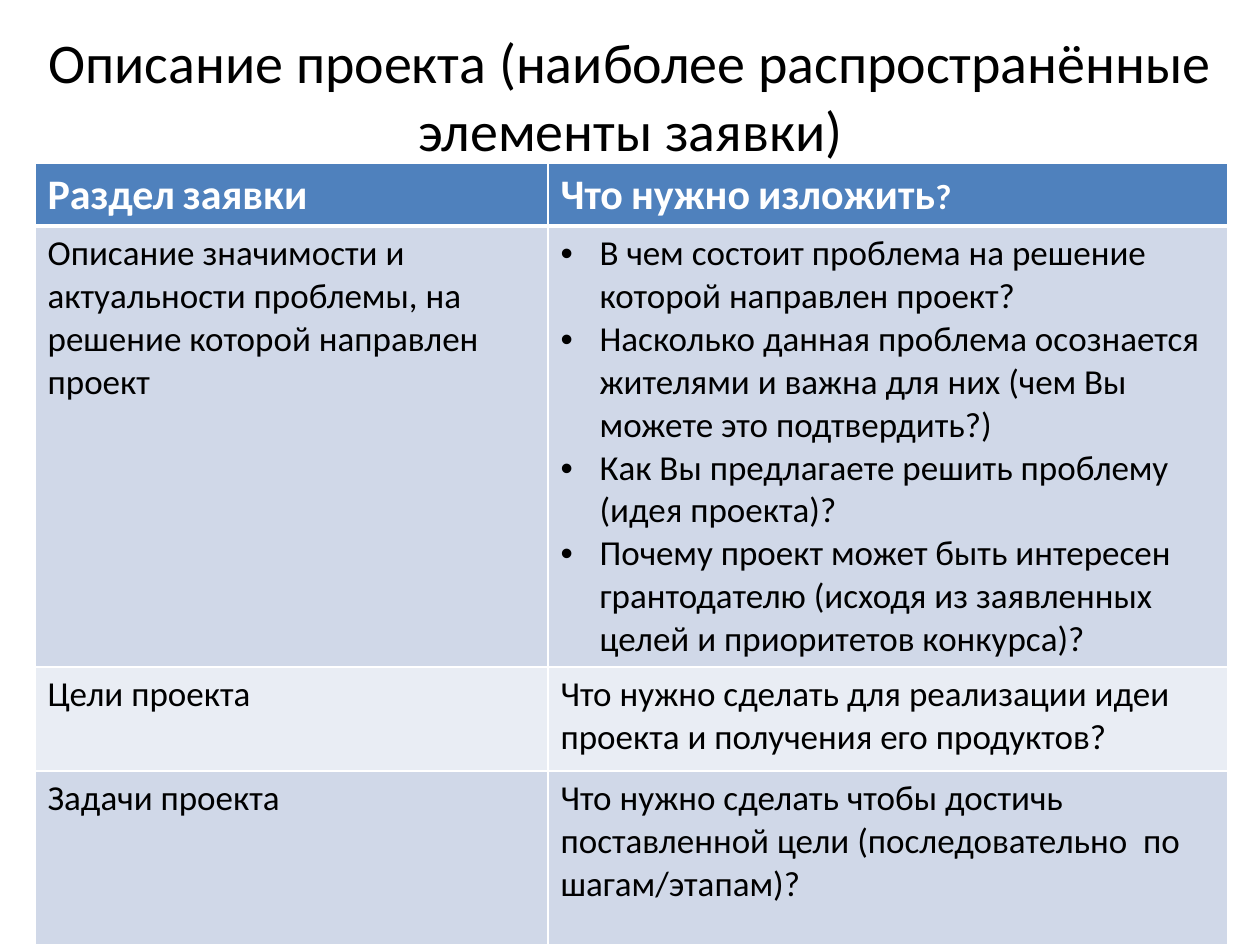
"""Builds the slide on the usual sections of a grant application."""
from dataclasses import dataclass

from lxml.etree import SubElement as Sub
from pptx import Presentation as Deck
from pptx.dml.color import RGBColor as Rgb
from pptx.enum.text import MSO_ANCHOR as Anchor, PP_ALIGN as Align
from pptx.oxml.ns import qn
from pptx.util import Emu, Pt

SCALE = 914400 / 126
FONT = "Calibri"
HEX = {"black": "000000", "white": "FFFFFF", "head": "4F81BD",
       "dark": "D0D8E8", "light": "E9EDF4"}
COLS = (513, 680)
INDENT = 39


@dataclass(frozen=True)
class Run:
    """A piece of text with its size."""
    text: str
    size: int = 20


@dataclass(frozen=True)
class Cell:
    """The paragraphs of one table cell."""
    paras: tuple[tuple[Run, ...], ...]
    listed: bool = False


@dataclass(frozen=True)
class Row:
    """One table row."""
    high: int
    fill: str
    cells: tuple[Cell, Cell]
    head: bool = False


def px(count: int) -> Emu:
    """Turns pixels into EMU."""
    return Emu(round(count * SCALE))


def plain(*lines: str, listed: bool = False) -> Cell:
    """Makes a cell with one run in each paragraph."""
    return Cell(tuple((Run(line),) for line in lines), listed)


ROWS = (
    Row(63, "head", (
        Cell(((Run("Раздел", 24), Run(" "), Run("заявки", 24)),)),
        Cell(((Run("Что", 24), Run(" "), Run("нужно", 24), Run(" "),
               Run("изложить", 24), Run("?")),)),
    ), head=True),
    Row(441, "dark", (
        plain("Описание значимости и актуальности проблемы, "
              "на решение которой направлен проект"),
        plain("В чем состоит проблема на решение которой направлен проект?",
              "Насколько данная проблема осознается жителями и важна "
              "для них (чем Вы можете это подтвердить?)",
              "Как Вы предлагаете решить проблему (идея проекта)?",
              "Почему проект может быть интересен грантодателю "
              "(исходя из заявленных целей и приоритетов конкурса)?",
              listed=True),
    )),
    Row(104, "light", (
        plain("Цели проекта"),
        plain("Что нужно сделать для реализации идеи проекта "
              "и получения его продуктов?"),
    )),
    Row(174, "dark", (
        plain("Задачи проекта"),
        plain("Что нужно сделать чтобы достичь поставленной цели "
              "(последовательно  по  шагам/этапам)?"),
    )),
)


def write(para, runs: tuple[Run, ...], color: str, bold: bool = False) -> None:
    """Adds runs to a paragraph."""
    for item in runs:
        run = para.add_run()
        run.text = item.text
        font = run.font
        font.name, font.size, font.bold = FONT, Pt(item.size), bold
        font.color.rgb = Rgb.from_string(HEX[color])


def bullet(para) -> None:
    """Gives a paragraph a hanging bullet."""
    props = para._p.get_or_add_pPr()
    props.set("marL", str(px(INDENT)))
    props.set("indent", str(-px(INDENT)))
    Sub(props, qn("a:buFont"), typeface="Arial")
    Sub(props, qn("a:buChar"), char="•")


def edge(cell, side: str, width: int) -> None:
    """Draws a white border on one side of a cell."""
    line = Sub(cell._tc.get_or_add_tcPr(), qn(f"a:ln{side}"), w=str(Pt(width)))
    fill = Sub(line, qn("a:solidFill"))
    Sub(fill, qn("a:srgbClr"), val=HEX["white"])


def draw_cell(cell, data: Cell, row: Row, under: bool) -> None:
    """Fills one cell with borders, colour and text."""
    for side, width in (("L", 1), ("R", 1), ("T", 3 if under else 1),
                        ("B", 3 if row.head else 1)):
        edge(cell, side, width)
    cell.fill.solid()
    cell.fill.fore_color.rgb = Rgb.from_string(HEX[row.fill])
    frame = cell.text_frame
    for spot, runs in enumerate(data.paras):
        para = frame.add_paragraph() if spot else frame.paragraphs[0]
        if data.listed:
            bullet(para)
        write(para, runs, "white" if row.head else "black", row.head)


def draw_table(slide, left: int, top: int) -> None:
    """Draws the table of sections."""
    high = sum(row.high for row in ROWS)
    table = slide.shapes.add_table(len(ROWS), len(COLS), px(left), px(top),
                                   px(sum(COLS)), px(high)).table
    for col, wide in zip(table.columns, COLS):
        col.width = px(wide)
    for spot, row in enumerate(ROWS):
        table.rows[spot].height = px(row.high)
        under = spot > 0 and ROWS[spot - 1].head
        for col, data in enumerate(row.cells):
            draw_cell(table.cell(spot, col), data, row, under)


def draw_title(slide, text: str) -> None:
    """Draws the centred title."""
    box = slide.shapes.add_textbox(px(35), px(16), px(1191), px(158))
    frame = box.text_frame
    frame.word_wrap = True
    frame.vertical_anchor = Anchor.MIDDLE
    frame.margin_left = frame.margin_right = px(8)
    para = frame.paragraphs[0]
    para.alignment = Align.CENTER
    write(para, (Run(text, 32),), "black")


def main() -> None:
    """Builds and saves the deck."""
    deck = Deck()
    deck.slide_width, deck.slide_height = px(1260), px(945)
    slide = deck.slides.add_slide(deck.slide_layouts[6])
    draw_title(slide, "Описание проекта (наиболее распространённые "
                      "элементы заявки)")
    draw_table(slide, 35, 163)
    deck.save("out.pptx")


if __name__ == "__main__":
    main()
